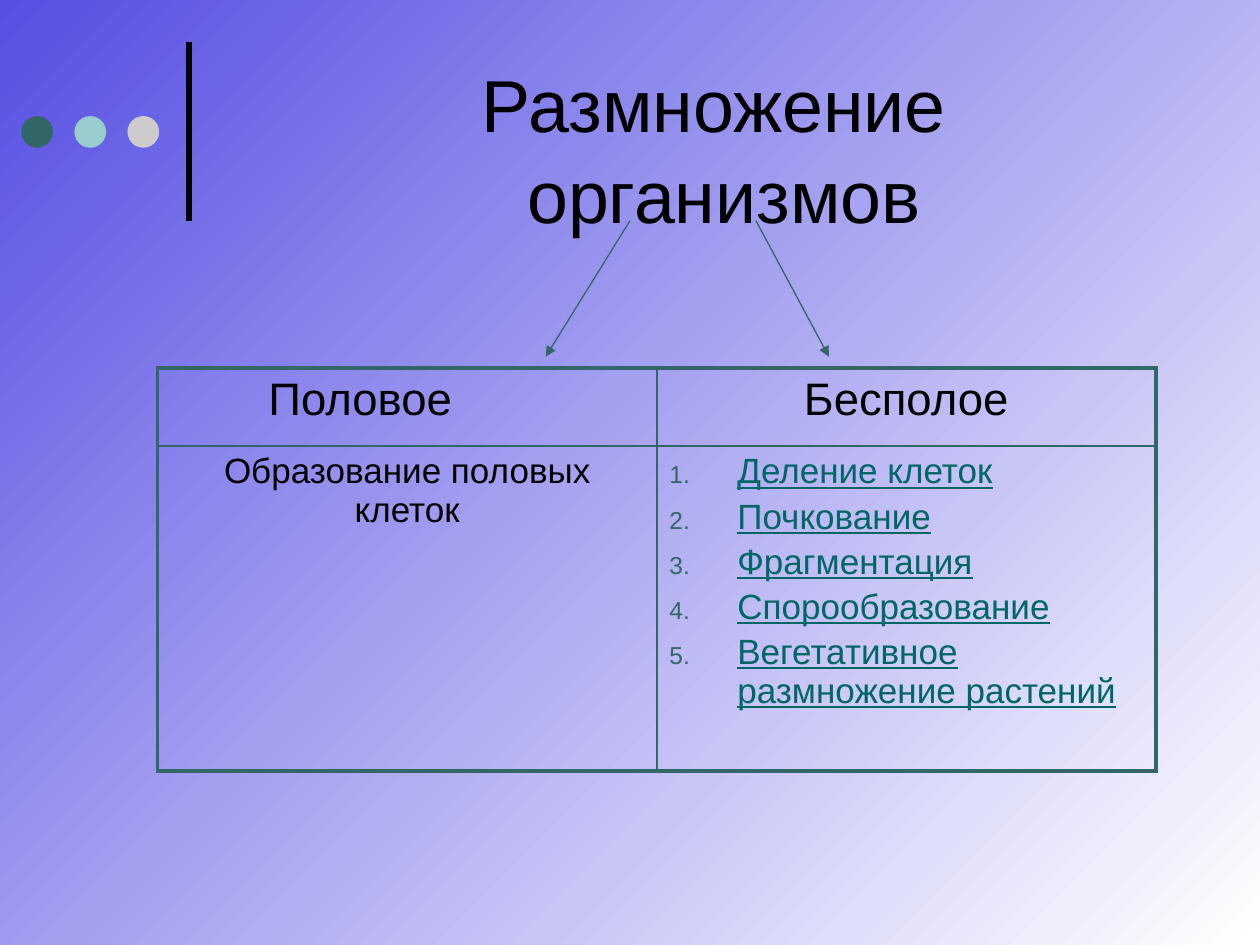
from dataclasses import dataclass

from lxml import etree
from pptx import Presentation
from pptx import util as u
from pptx.dml.color import RGBColor
from pptx.enum import shapes, text
from pptx.oxml.ns import qn


@dataclass(frozen=True)
class Theme:
    font: str = "Arial"
    ink: str = "000000"
    accent: str = "336666"
    link: str = "006666"
    dots: tuple = ("336666", "99CCCC", "CCCCCC")
    gradient: tuple = ("564FE3", "FFFFFF")
    title_size: int = 42
    header_size: int = 26
    body_size: int = 20
    outer_line: float = 2.25
    inner_line: float = 1


theme = Theme()


def format_paragraph(paragraph, size, color=theme.ink, **paragraph_format):
    for name, value in paragraph_format.items():
        setattr(paragraph, name, value)
    for run in paragraph.runs:
        values = {"name": theme.font, "size": u.Pt(size), "underline": color == theme.link}
        for name, value in values.items():
            setattr(run.font, name, value)
        run.font.color.rgb = RGBColor.from_string(color)


def add_line(slide, start, end, color, width, arrow=False):
    line = slide.shapes.add_connector(
        shapes.MSO_CONNECTOR.STRAIGHT, *(u.Cm(value) for value in start + end)
    )
    line.line.color.rgb = RGBColor.from_string(color)
    line.line.width = u.Pt(width)
    if arrow:
        etree.SubElement(line.line._get_or_add_ln(), qn("a:tailEnd"), type="triangle")
    etree.SubElement(line._element.spPr, qn("a:effectLst"))


presentation = Presentation()
presentation.slide_width = u.Cm(25.4)
presentation.slide_height = u.Cm(19.05)
slide = presentation.slides.add_slide(presentation.slide_layouts[6])

# Background gradient, from top left to bottom right
background = slide.background.fill
background.gradient()
background.gradient_angle = 315
for stop, color, position in zip(background.gradient_stops, theme.gradient, (0, 1)):
    stop.color.rgb = RGBColor.from_string(color)
    stop.position = position

# Vertical rule and three dots
add_line(slide, (3.81, 4.45), (3.81, 0.84), theme.ink, 3)
for index, color in enumerate(theme.dots):
    dot = slide.shapes.add_shape(
        shapes.MSO_SHAPE.OVAL, u.Cm(0.43 + 1.07 * index), u.Cm(2.34), u.Cm(0.64), u.Cm(0.64)
    )
    dot.shadow.inherit = False
    dot.fill.solid()
    dot.fill.fore_color.rgb = RGBColor.from_string(color)
    dot.line.fill.background()

# Title
title = slide.shapes.add_textbox(u.Cm(4.65), u.Cm(0.84), u.Cm(19.48), u.Cm(4.24))
title.text_frame.word_wrap = True
title.text_frame.vertical_anchor = text.MSO_ANCHOR.MIDDLE
title.text_frame.text = "Размножение\v организмов"
format_paragraph(
    title.text_frame.paragraphs[0], theme.title_size,
    alignment=text.PP_ALIGN.CENTER, line_spacing=1.04,
)

# Table
column_widths = (10.06, 10.06)
row_heights = (1.57, 6.55)
table = slide.shapes.add_table(
    2, 2, u.Cm(3.18), u.Cm(7.42), u.Cm(sum(column_widths)), u.Cm(sum(row_heights))
).table
table.first_row = False
table.horz_banding = False
for column, width in zip(table.columns, column_widths):
    column.width = u.Cm(width)
for row, height in zip(table.rows, row_heights):
    row.height = u.Cm(height)

# Cell text
left, center = text.PP_ALIGN.LEFT, text.PP_ALIGN.CENTER
asexual_kinds = (
    "Деление клеток",
    "Почкование",
    "Фрагментация",
    "Спорообразование",
    "Вегетативное размножение растений",
)
cell_contents = {
    (0, 0): (("Половое",), theme.header_size, theme.ink, left),
    (0, 1): (("Бесполое",), theme.header_size, theme.ink, center),
    (1, 0): (("Образование половых клеток",), theme.body_size, theme.ink, center),
    (1, 1): (asexual_kinds, theme.body_size, theme.link, left),
}
for (row, column), (lines, size, color, alignment) in cell_contents.items():
    cell = table.cell(row, column)
    cell.fill.background()
    cell.text_frame.text = "\n".join(lines)
    for paragraph in cell.text_frame.paragraphs:
        format_paragraph(paragraph, size, color, alignment=alignment, space_before=u.Pt(3.5))

    # Thick outer and thin inner borders
    outer_sides = {"L": column == 0, "R": column == 1, "T": row == 0, "B": row == 1}
    for index, (side, is_outer) in enumerate(outer_sides.items()):
        width = u.Pt(theme.outer_line if is_outer else theme.inner_line)
        border = etree.Element(qn(f"a:ln{side}"), w=str(width))
        fill = etree.SubElement(border, qn("a:solidFill"))
        etree.SubElement(fill, qn("a:srgbClr"), val=theme.accent)
        cell._tc.get_or_add_tcPr().insert(index, border)
table.cell(0, 0).margin_left = u.Cm(2.23)

# Numbered list
for paragraph in table.cell(1, 1).text_frame.paragraphs:
    properties = paragraph._p.get_or_add_pPr()
    properties.set("marL", str(u.Cm(1.37)))
    properties.set("indent", str(-u.Cm(1.37)))
    bullet_color = etree.SubElement(properties, qn("a:buClr"))
    etree.SubElement(bullet_color, qn("a:srgbClr"), val=theme.accent)
    etree.SubElement(properties, qn("a:buSzPct"), val="70000")
    etree.SubElement(properties, qn("a:buFont"), typeface=theme.font)
    etree.SubElement(properties, qn("a:buAutoNum"), type="arabicPeriod")

# Arrows from the title to the two columns
for start, end in (((12.7, 4.45), (11, 7.19)), ((15.24, 4.45), (16.71, 7.19))):
    add_line(slide, start, end, theme.accent, 0.75, arrow=True)

presentation.save("out.pptx")
